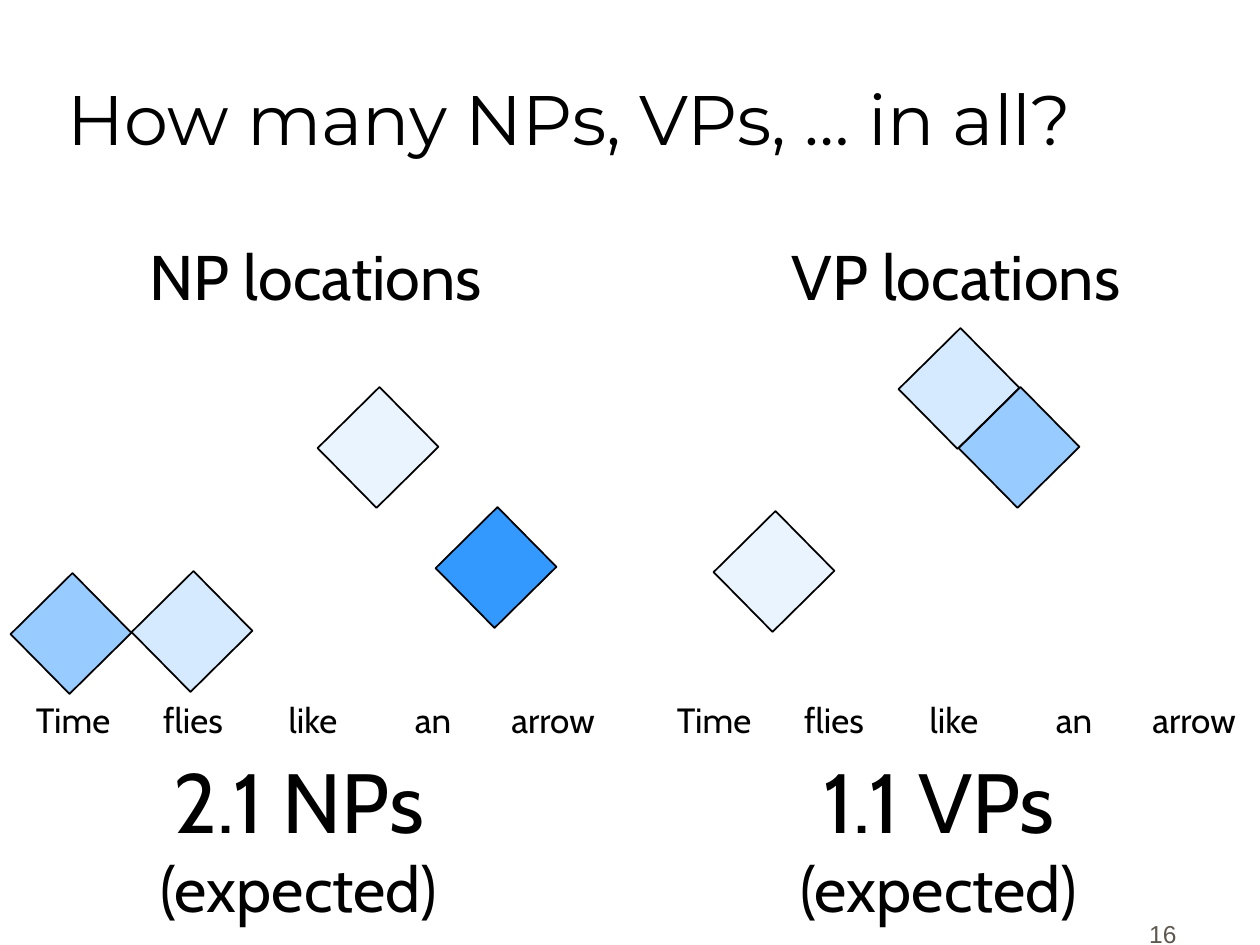
"""Build a slide that counts expected NPs and VPs in a parsed sentence."""
from lxml import etree
from pptx import Presentation
from pptx import util as u
from pptx.dml.color import RGBColor
from pptx.enum import shapes, text
from pptx.oxml import ns

COLORS = {"ink": "000000", "cell": "3399FF", "number": "5E574E"}
TITLE = "How many NPs, VPs, … in all?"
WORDS = ["Time", "flies", "like", "an", "arrow"]
PANELS = [
    {"left": 13, "heading": ("NP locations", 131, 369),
     "total": ("2.1 NPs", "(expected)", 135),
     "cells": [(454, 524, 100), (336, 404, 10), (150, 588, 20), (29, 590, 50)]},
    {"left": 654, "heading": ("VP locations", 774, 364),
     "total": ("1.1 VPs", "(expected)", 775),
     "cells": [(977, 404, 50), (917, 345, 20), (732, 528, 10)]},
]
WORD_PITCH = 120
CELL_WIDTH, CELL_HEIGHT, CELL_TURN = 84, 87, 45.4


def px(length):
    return round(length * 914400 / 126)


def color(name):
    return RGBColor.from_string(COLORS[name])


def style(font, size, family="Cabin", ink="ink"):
    font.size = u.Pt(size)
    font.name = family
    font.color.rgb = color(ink)


def add_label(parent, box, wrap=True, align=text.PP_ALIGN.CENTER):
    frame = parent.add_textbox(*map(px, box)).text_frame
    frame.word_wrap = wrap
    frame.auto_size = text.MSO_AUTO_SIZE.SHAPE_TO_FIT_TEXT
    frame.paragraphs[0].alignment = align
    return frame, frame.paragraphs[0]


def add_cell(parent, left, top, opacity):
    cell = parent.add_shape(shapes.MSO_SHAPE.RECTANGLE,
                            *map(px, (left, top, CELL_WIDTH, CELL_HEIGHT)))
    cell.rotation = CELL_TURN
    cell.shadow.inherit = False
    cell.fill.solid()
    cell.fill.fore_color.rgb = color("cell")
    cell.line.color.rgb = color("ink")
    cell.line.width = u.Pt(1)
    if opacity < 100:
        fill = cell.fill._xPr.find(ns.qn("a:solidFill"))
        etree.SubElement(fill[0], ns.qn("a:alpha"), val=str(opacity * 1000))


def add_panel(parent, panel):
    heading, left, width = panel["heading"]
    _, line = add_label(parent, (left, 231, width, 89), wrap=False)
    line.text = heading
    style(line.font, 36)

    sentence = parent.add_group_shape().shapes
    for i, word in enumerate(WORDS):
        _, line = add_label(sentence, (panel["left"] + i * WORD_PITCH, 692, WORD_PITCH, 55))
        line.text = word
        style(line.font, 20)

    for cell in panel["cells"]:
        add_cell(parent, *cell)

    count, note, left = panel["total"]
    _, line = add_label(parent, (left, 743, 328, 190), wrap=False)
    for part, size in ((count, 48), (note, 36)):
        run = line.add_run()
        run.text = part
        style(run.font, size)
        if part == count:
            line.add_line_break()


def main():
    deck = Presentation()
    deck.slide_width, deck.slide_height = u.Inches(10), u.Inches(7.5)
    slide = deck.slides.add_slide(deck.slide_layouts[5])

    title = slide.shapes.title
    title.left, title.top, title.width, title.height = map(px, (55, 8, 1183, 158))
    frame = title.text_frame
    frame.text = TITLE
    frame.auto_size = text.MSO_AUTO_SIZE.NONE
    frame.vertical_anchor = text.MSO_ANCHOR.BOTTOM
    frame.paragraphs[0].alignment = text.PP_ALIGN.LEFT
    style(frame.paragraphs[0].font, 40, "Montserrat")

    for panel in PANELS:
        add_panel(slide.shapes, panel)

    frame, number = add_label(slide.shapes, (927, 892, 262, 63), align=text.PP_ALIGN.RIGHT)
    frame.auto_size = text.MSO_AUTO_SIZE.NONE
    frame.vertical_anchor = text.MSO_ANCHOR.BOTTOM
    number.text = "16"
    style(number.font, 14, "Arial", "number")

    deck.save("out.pptx")


if __name__ == "__main__":
    main()
